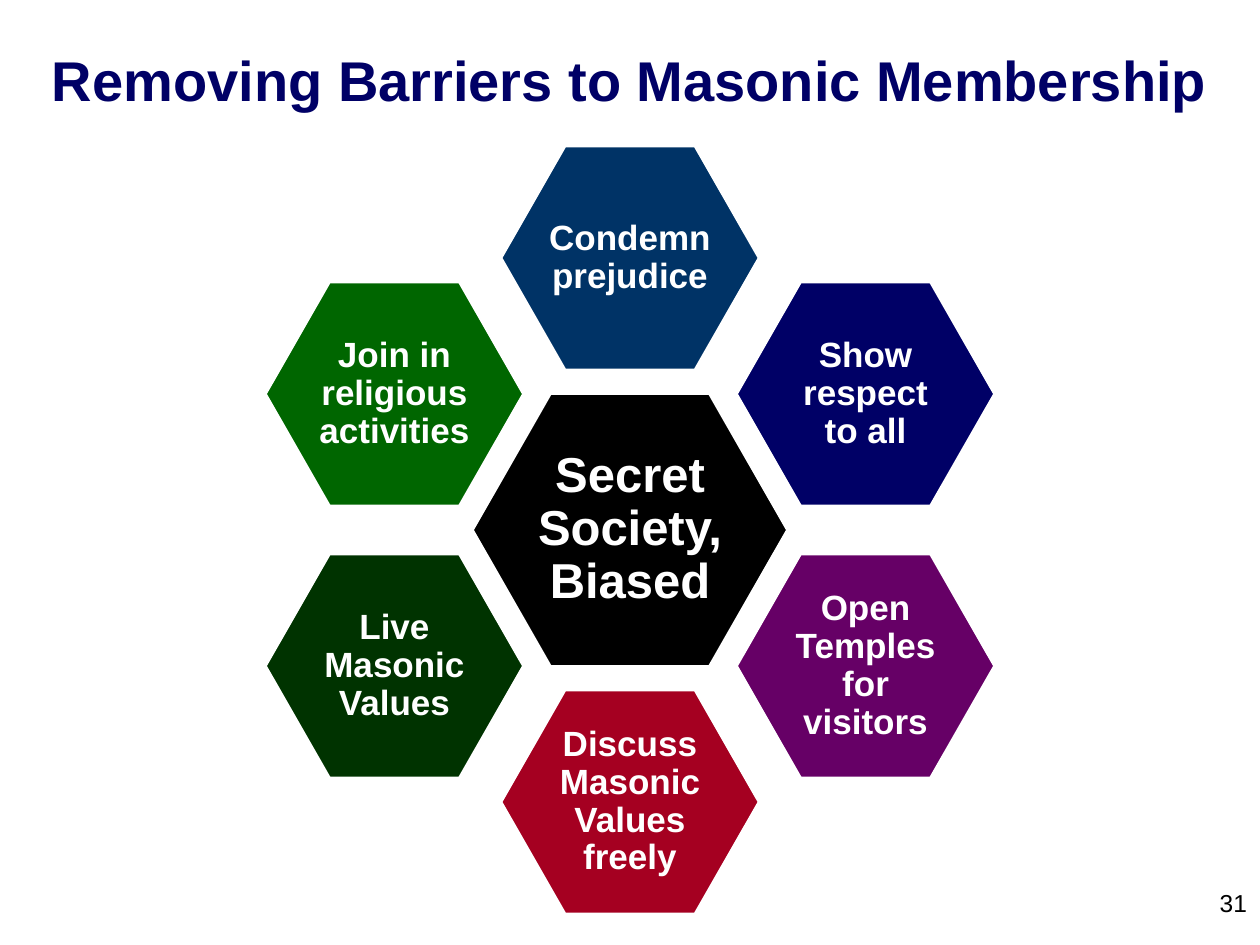
from math import cos, radians, sin

from pptx import Presentation
from pptx.dml.color import RGBColor
from pptx.enum.shapes import MSO_SHAPE
from pptx.enum.text import MSO_ANCHOR, PP_ALIGN
from pptx.util import Pt

HEXAGON = MSO_SHAPE.HEXAGON
TOP, MIDDLE = MSO_ANCHOR.TOP, MSO_ANCHOR.MIDDLE
CENTER, RIGHT = PP_ALIGN.CENTER, PP_ALIGN.RIGHT

TITLE = "Removing Barriers to Masonic Membership"
PAGE_NUMBER = "31"
CORE = ("Secret Society, Biased", "000000")
RING = [  # clockwise from the top
    ("Condemn prejudice", "003366"),
    ("Show respect to all", "000066"),
    ("Open Temples for visitors", "660066"),
    ("Discuss Masonic Values freely", "A50021"),
    ("Live Masonic Values", "003300"),
    ("Join in religious activities", "006600"),
]

THEME = {
    "font": "Arial",
    "title": {"size": 32, "color": "000066", "bold": True},
    "number": {"size": 14, "color": "000000", "bold": False},
    "core": {"size": 28, "color": "FFFFFF", "bold": True},
    "ring": {"size": 20, "color": "FFFFFF", "bold": True},
    "outline": "FFFFFF",
}

PAGE_W, PAGE_H = 1260, 945
CENTER_X, CENTER_Y, RADIUS = 630, 530, 272
CORE_SIZE, RING_SIZE = (314, 272), (257, 223)
SIDE_MARGINS = (13, 6)
TEXT_SHARE = 0.67  # part of a hexagon's width and height open to text


def px(length):
    return round(length * 914400 / 126)


def add_text(page, text, area, style, align=CENTER, anchor=MIDDLE,
             margins=SIDE_MARGINS, spacing=1.0):
    box = page.shapes.add_textbox(*map(px, area))
    frame = box.text_frame
    across, down = map(px, margins)
    settings = {"word_wrap": True, "vertical_anchor": anchor,
                "margin_left": across, "margin_right": across,
                "margin_top": down, "margin_bottom": down}
    for name, value in settings.items():
        setattr(frame, name, value)
    para = frame.paragraphs[0]
    para.alignment, para.line_spacing = align, spacing
    span = para.add_run()
    span.text = text
    for name, value in {"name": THEME["font"], "size": Pt(style["size"]),
                        "bold": style["bold"]}.items():
        setattr(span.font, name, value)
    span.font.color.rgb = RGBColor.from_string(style["color"])


def centered_area(x, y, width, height):
    return x - width / 2, y - height / 2, width, height


def add_hexagon(page, text, color, x, y, size, style, margin):
    hexagon = page.shapes.add_shape(HEXAGON, *map(px, centered_area(x, y, *size)))
    hexagon.adjustments[0] = 0.286
    hexagon.shadow.inherit = False
    hexagon.fill.solid()
    hexagon.fill.fore_color.rgb = RGBColor.from_string(color)
    hexagon.line.color.rgb = RGBColor.from_string(THEME["outline"])
    hexagon.line.width = Pt(1)
    text_size = [side * TEXT_SHARE for side in size]
    add_text(page, text, centered_area(x, y, *text_size), style,
             margins=(margin, margin), spacing=0.9)


def main():
    deck = Presentation()
    deck.slide_width, deck.slide_height = px(PAGE_W), px(PAGE_H)
    page = deck.slides.add_slide(deck.slide_layouts[6])

    add_text(page, TITLE, (0, 0, PAGE_W, 158), THEME["title"])
    add_text(page, PAGE_NUMBER, (998, 882, 262, 63), THEME["number"], RIGHT, TOP)

    add_hexagon(page, *CORE, CENTER_X, CENTER_Y, CORE_SIZE, THEME["core"], 5)
    for index, (text, color) in enumerate(RING):
        angle = radians(index * 360 / len(RING))
        x = CENTER_X + RADIUS * sin(angle)
        y = CENTER_Y - RADIUS * cos(angle)
        add_hexagon(page, text, color, x, y, RING_SIZE, THEME["ring"], 4)

    deck.save("out.pptx")


if __name__ == "__main__":
    main()
